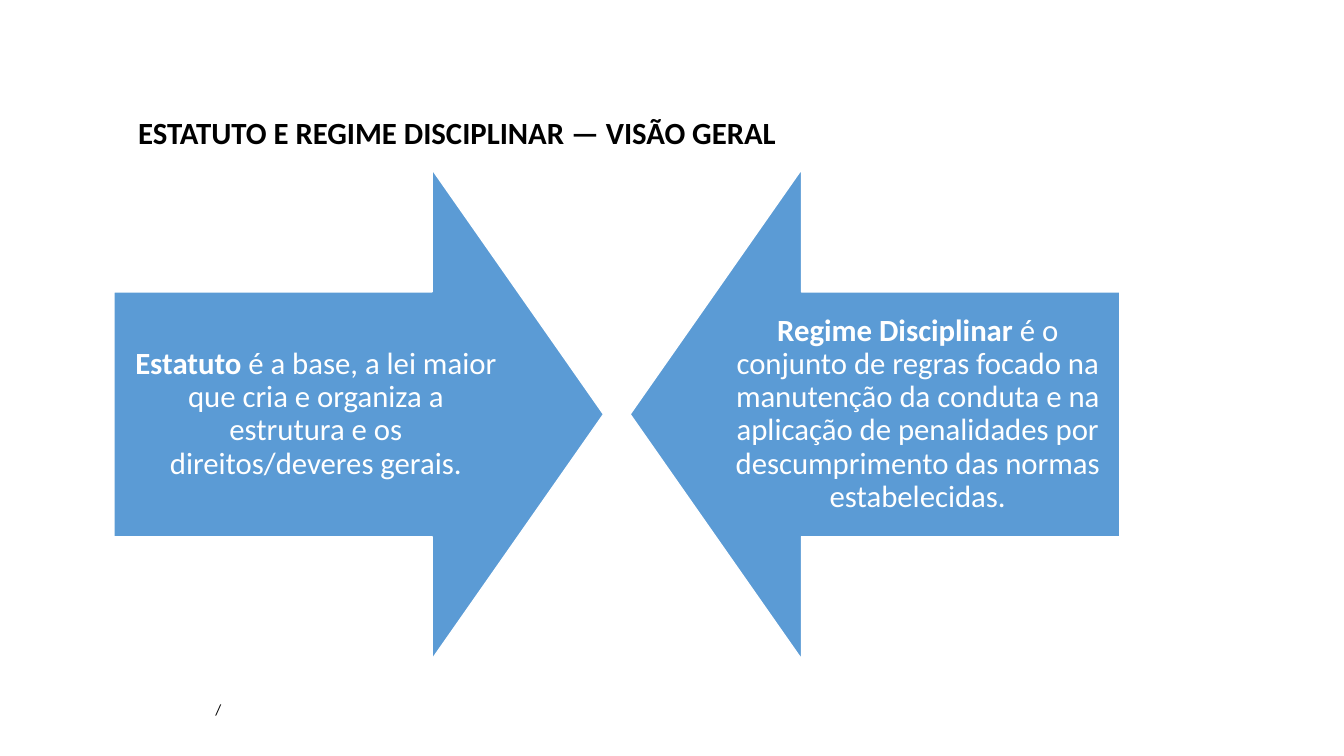
from pptx import Presentation
from pptx.dml.color import RGBColor
from pptx.enum.shapes import MSO_SHAPE as Kind
from pptx.enum.text import MSO_ANCHOR as Anchor, MSO_AUTO_SIZE as Fit, PP_ALIGN as Align
from pptx.util import Cm, Pt

BLUE = RGBColor(0x5B, 0x9B, 0xD5)
WHITE = RGBColor(0xFF, 0xFF, 0xFF)
BLACK = RGBColor(0, 0, 0)

TITLE = "ESTATUTO E REGIME DISCIPLINAR — VISÃO GERAL"
FOOT = "/"
ARROWS = [
    (Kind.RIGHT_ARROW, "Estatuto",
     " é a base, a lei maior que cria e organiza a estrutura e os direitos/deveres gerais."),
    (Kind.LEFT_ARROW, "Regime Disciplinar",
     " é o conjunto de regras focado na manutenção da conduta e na aplicação de "
     "penalidades por descumprimento das normas estabelecidas."),
]
LEFT, TOP, SIDE, GAP, PAD = 2.87, 4.27, 12.34, 0.67, 0.43


def style(font, size, color, bold=False):
    font.name = "Calibri"
    font.size = Pt(size)
    font.color.rgb = color
    font.bold = bold


def add_title(slide):
    title = slide.shapes.title
    title.left, title.top, title.width, title.height = Cm(3.23), Cm(2.74), Cm(24.59), Cm(3.84)
    frame = title.text_frame
    frame.text = TITLE
    frame.auto_size = Fit.NONE
    frame.vertical_anchor = Anchor.TOP
    para = frame.paragraphs[0]
    para.alignment = Align.LEFT
    style(para.runs[0].font, 22, BLACK, True)


def add_foot(slide):
    box = slide.shapes.add_textbox(Cm(5.18), Cm(17.53), Cm(23.5), Cm(0.74))
    frame = box.text_frame
    frame.word_wrap = True
    frame.text = FOOT
    style(frame.paragraphs[0].runs[0].font, 11, BLACK)


def add_arrow(slide, index, kind, term, rest):
    left = LEFT + index * (SIDE + GAP)
    arrow = slide.shapes.add_shape(kind, Cm(left), Cm(TOP), Cm(SIDE), Cm(SIDE))
    arrow.adjustments[0] = 0.5
    arrow.adjustments[1] = 0.35
    arrow.shadow.inherit = False
    arrow.fill.solid()
    arrow.fill.fore_color.rgb = BLUE
    arrow.line.color.rgb = WHITE
    arrow.line.width = Pt(1)
    frame = arrow.text_frame
    frame.word_wrap = True
    frame.vertical_anchor = Anchor.MIDDLE
    frame.margin_left = frame.margin_right = Cm(PAD)
    frame.margin_top = frame.margin_bottom = Cm(PAD)
    para = frame.paragraphs[0]
    para.alignment = Align.CENTER
    para.line_spacing = 0.9
    for text, bold in ((term, True), (rest, False)):
        run = para.add_run()
        run.text = text
        style(run.font, 22, WHITE, bold)


def main():
    deck = Presentation()
    deck.slide_width, deck.slide_height = Cm(33.87), Cm(19.05)
    slide = deck.slides.add_slide(deck.slide_layouts[5])
    add_foot(slide)
    add_title(slide)
    for index, (kind, term, rest) in enumerate(ARROWS):
        add_arrow(slide, index, kind, term, rest)
    deck.save("out.pptx")


if __name__ == "__main__":
    main()
